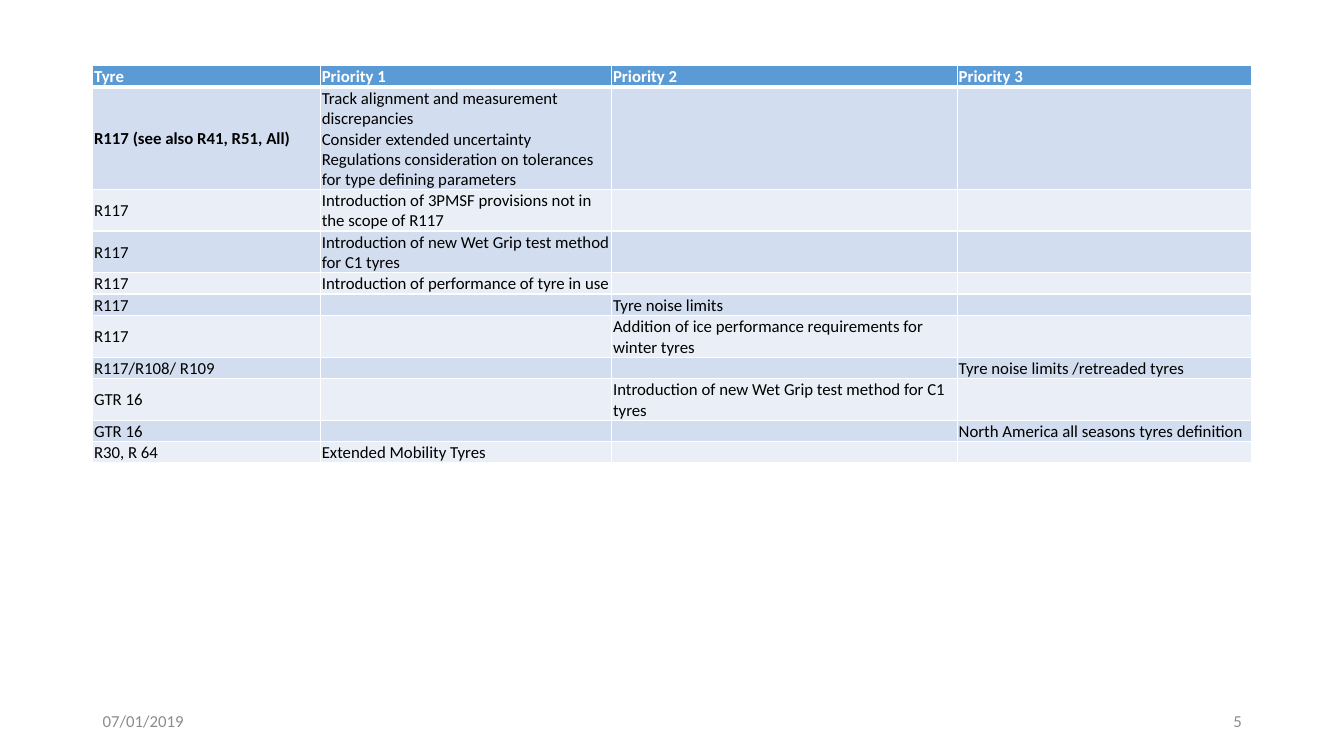
from dataclasses import dataclass

from lxml import etree
from pptx import Presentation
from pptx.dml.color import RGBColor
from pptx.enum.text import MSO_ANCHOR, PP_ALIGN
from pptx.oxml.ns import qn
from pptx.slide import Slide
from pptx.table import _Cell
from pptx.text.text import TextFrame
from pptx.util import Cm, Pt

MIDDLE = MSO_ANCHOR.MIDDLE
LEFT = PP_ALIGN.LEFT
RIGHT = PP_ALIGN.RIGHT


@dataclass(frozen=True)
class Theme:
    font: str = "Calibri"
    text_size: float = 12
    text: str = "000000"
    header_text: str = "FFFFFF"
    footer_text: str = "8C8C8C"
    header_fill: str = "5B9BD5"
    band_fills: tuple[str, str] = ("D2DEEF", "EAEFF7")
    border: str = "FFFFFF"
    border_width: float = 1
    header_border_width: float = 3


@dataclass(frozen=True)
class Topic:
    regulation: str
    priority: int
    text: str
    lines: int = 1
    bold: bool = False


@dataclass(frozen=True)
class Footer:
    text: str
    left: float
    alignment: PP_ALIGN


THEME = Theme()
HEADERS = ["Tyre", "Priority 1", "Priority 2", "Priority 3"]
COLUMN_WIDTHS = [5.74, 7.34, 8.71, 7.42]
TABLE_LEFT, TABLE_TOP = 2.34, 1.65
LINE_HEIGHT, ROW_PADDING, CELL_MARGIN = 0.51, 0.03, 0.03
WET_GRIP = "Introduction of new Wet Grip test method for C1 tyres"
TOPICS = [
    Topic(
        "R117 (see also R41, R51, All)",
        1,
        "Track alignment and measurement discrepancies\n"
        "Consider extended uncertainty\n"
        "Regulations consideration on tolerances for type defining parameters",
        lines=5,
        bold=True,
    ),
    Topic("R117", 1, "Introduction of 3PMSF provisions not in the scope of R117", 2),
    Topic("R117", 1, WET_GRIP, 2),
    Topic("R117", 1, "Introduction of performance of tyre in use"),
    Topic("R117", 2, "Tyre noise limits"),
    Topic("R117", 2, "Addition of ice performance requirements for winter tyres", 2),
    Topic("R117/R108/ R109", 3, "Tyre noise limits /retreaded tyres"),
    Topic("GTR 16", 2, WET_GRIP, 2),
    Topic("GTR 16", 3, "North America all seasons tyres definition"),
    Topic("R30, R 64", 1, "Extended Mobility Tyres"),
]
FOOTERS = [Footer("07/01/2019", 2.34, LEFT), Footer("5", 23.93, RIGHT)]


def write_text(
    text_frame: TextFrame, text: str, color: str, bold: bool = False, alignment: PP_ALIGN = LEFT
) -> None:
    text_frame.text = text
    for paragraph in text_frame.paragraphs:
        paragraph.alignment = alignment
        for run in paragraph.runs:
            run.font.name = THEME.font
            run.font.size = Pt(THEME.text_size)
            run.font.bold = bold
            run.font.color.rgb = RGBColor.from_string(color)
        if not paragraph.runs:
            end_properties = etree.SubElement(paragraph._p, qn("a:endParaRPr"))
            end_properties.set("sz", str(int(THEME.text_size * 100)))


def add_borders(cell: _Cell, top_width: float, bottom_width: float) -> None:
    properties = cell._tc.get_or_add_tcPr()
    widths = {
        "a:lnL": THEME.border_width,
        "a:lnR": THEME.border_width,
        "a:lnT": top_width,
        "a:lnB": bottom_width,
    }
    for tag, width in widths.items():
        line = etree.SubElement(properties, qn(tag), w=str(Pt(width)))
        fill = etree.SubElement(line, qn("a:solidFill"))
        etree.SubElement(fill, qn("a:srgbClr"), val=THEME.border)


def format_cell(cell: _Cell, row_index: int) -> None:
    cell.vertical_anchor = MIDDLE
    cell.margin_left = cell.margin_right = cell.margin_top = Cm(CELL_MARGIN)
    cell.margin_bottom = Cm(0)
    thin, thick = THEME.border_width, THEME.header_border_width
    add_borders(cell, thick if row_index == 1 else thin, thick if row_index == 0 else thin)
    band_fill = THEME.band_fills[(row_index - 1) % 2]
    cell.fill.solid()
    cell.fill.fore_color.rgb = RGBColor.from_string(band_fill if row_index else THEME.header_fill)


def add_priority_table(slide: Slide) -> None:
    heights = [lines * LINE_HEIGHT + ROW_PADDING for lines in [1, *(topic.lines for topic in TOPICS)]]
    table = slide.shapes.add_table(
        len(heights),
        len(HEADERS),
        Cm(TABLE_LEFT),
        Cm(TABLE_TOP),
        Cm(sum(COLUMN_WIDTHS)),
        Cm(sum(heights)),
    ).table
    for column, width in zip(table.columns, COLUMN_WIDTHS):
        column.width = Cm(width)
    for row, height in zip(table.rows, heights):
        row.height = Cm(height)

    for column_index, header in enumerate(HEADERS):
        cell = table.cell(0, column_index)
        format_cell(cell, 0)
        write_text(cell.text_frame, header, THEME.header_text, bold=True)

    for row_index, topic in enumerate(TOPICS, start=1):
        texts = {0: topic.regulation, topic.priority: topic.text}
        for column_index in range(len(HEADERS)):
            cell = table.cell(row_index, column_index)
            format_cell(cell, row_index)
            bold = topic.bold and column_index == 0
            write_text(cell.text_frame, texts.get(column_index, ""), THEME.text, bold)


def add_footer(slide: Slide, footer: Footer) -> None:
    text_box = slide.shapes.add_textbox(Cm(footer.left), Cm(17.65), Cm(7.62), Cm(1.01))
    text_frame = text_box.text_frame
    text_frame.word_wrap = True
    text_frame.vertical_anchor = MIDDLE
    write_text(text_frame, footer.text, THEME.footer_text, alignment=footer.alignment)


def main() -> None:
    presentation = Presentation()
    presentation.slide_width = Cm(33.87)
    presentation.slide_height = Cm(19.05)
    slide = presentation.slides.add_slide(presentation.slide_layouts[6])
    for footer in FOOTERS:
        add_footer(slide, footer)
    add_priority_table(slide)
    presentation.save("out.pptx")


if __name__ == "__main__":
    main()
